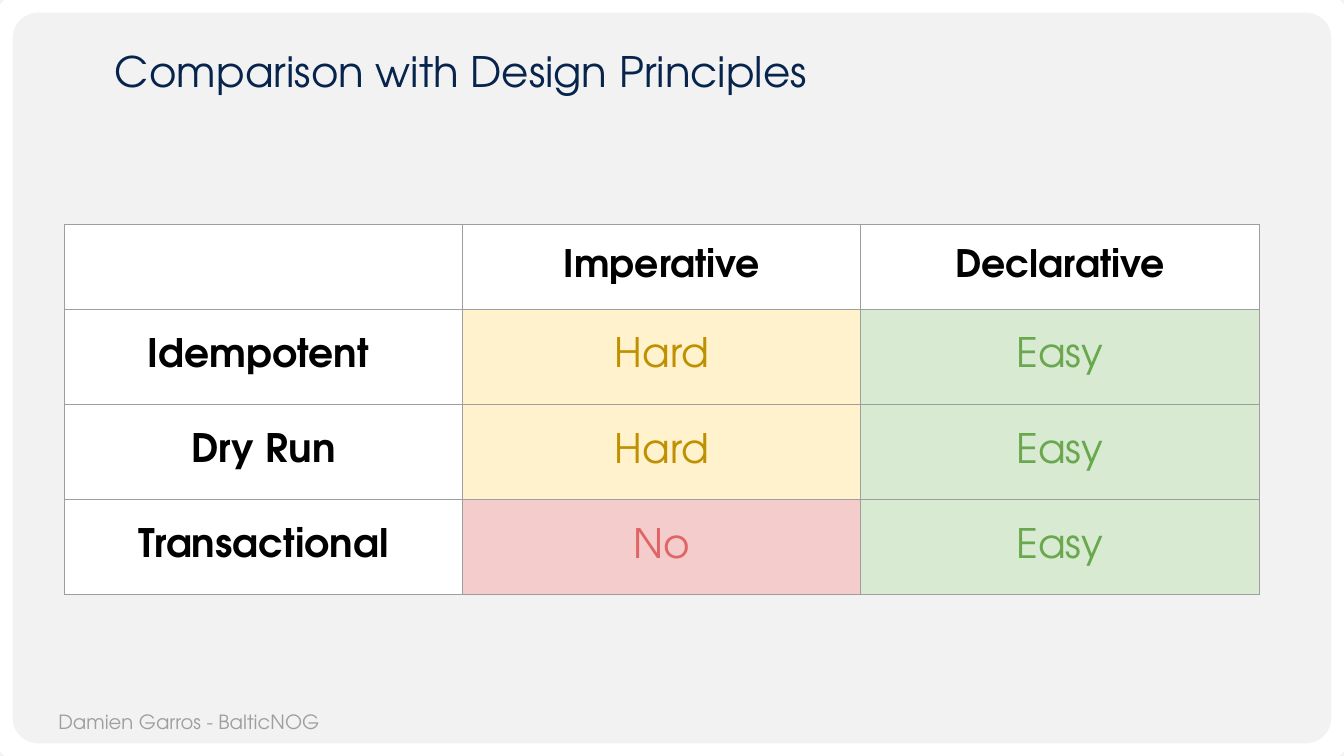
from dataclasses import dataclass

from lxml import etree
from pptx import Presentation
from pptx.dml.color import RGBColor
from pptx.enum.shapes import MSO_SHAPE
from pptx.enum.text import MSO_ANCHOR, MSO_AUTO_SIZE, PP_ALIGN
from pptx.oxml.ns import qn
from pptx.util import Pt

ROUNDED = MSO_SHAPE.ROUNDED_RECTANGLE
TOP, MIDDLE = MSO_ANCHOR.TOP, MSO_ANCHOR.MIDDLE
LEFT, CENTER = PP_ALIGN.LEFT, PP_ALIGN.CENTER
NO_AUTOFIT = MSO_AUTO_SIZE.NONE
TITLE_ONLY = 5
BORDER_TAGS = ("a:lnL", "a:lnR", "a:lnT", "a:lnB")


@dataclass(frozen=True)
class Theme:
    """Colours, font and type sizes of the slide."""
    font: str = "TeX Gyre Adventor"
    background: str = "F2F2F2"
    white: str = "FFFFFF"
    black: str = "000000"
    navy: str = "07244D"
    grey: str = "9E9E9E"
    title_size: int = 30
    footer_size: int = 14
    header_size: int = 27
    label_size: int = 28
    rating_size: int = 29
    inset: float = 7.2


THEME = Theme()
RATINGS = {"Hard": ("BF9000", "FFF2CC"),
           "Easy": ("6AA84F", "D9EAD3"),
           "No": ("E06666", "F4CCCC")}
HEADERS = ("", "Imperative", "Declarative")
PRINCIPLES = (("Idempotent ", "Hard", "Easy"),
              ("Dry Run", "Hard", "Easy"),
              ("Transactional", "No", "Easy"))


def set_attributes(target, values):
    """Set every attribute in values on the target."""
    for name, value in values.items():
        setattr(target, name, value)


def set_insets(target):
    """Give a cell or text frame the theme's margins."""
    sides = ("left", "right", "top", "bottom")
    set_attributes(target, {f"margin_{side}": Pt(THEME.inset) for side in sides})


def write_text(text_frame, text, size, color, bold=False, alignment=LEFT):
    """Write one formatted paragraph and return it."""
    paragraph = text_frame.paragraphs[0]
    paragraph.alignment = alignment
    run = paragraph.add_run()
    run.text = text
    set_attributes(run.font, {"name": THEME.font, "size": Pt(size), "bold": bold})
    run.font.color.rgb = RGBColor.from_string(color)
    return paragraph


def add_frame(slide, left, top, width, height):
    """Draw the rounded white border around the slide."""
    frame = slide.shapes.add_shape(ROUNDED, Pt(left), Pt(top), Pt(width), Pt(height))
    frame.adjustments[0] = 0.05
    frame.shadow.inherit = False
    frame.fill.background()
    frame.line.width = Pt(18)
    frame.line.color.rgb = RGBColor.from_string(THEME.white)


def add_footer(slide, left, top, width, height):
    """Place the speaker line."""
    footer = slide.shapes.add_textbox(Pt(left), Pt(top), Pt(width), Pt(height))
    footer.text_frame.word_wrap = True
    set_insets(footer.text_frame)
    write_text(footer.text_frame, "Damien Garros - BalticNOG", THEME.footer_size, THEME.grey)


def add_title(slide, left, top, width, height):
    """Move and fill the title placeholder."""
    title = slide.shapes.title
    set_attributes(title, {"left": Pt(left), "top": Pt(top),
                           "width": Pt(width), "height": Pt(height)})
    set_attributes(title.text_frame, {"vertical_anchor": TOP, "word_wrap": True,
                                      "auto_size": NO_AUTOFIT})
    set_insets(title.text_frame)
    paragraph = write_text(title.text_frame, "Comparison with Design Principles",
                           THEME.title_size, THEME.navy)
    paragraph.line_spacing = 0.8


def set_borders(cell):
    """Draw a thin grey line on all four sides of a cell."""
    properties = cell._tc.get_or_add_tcPr()
    for position, tag in enumerate(BORDER_TAGS):
        line = etree.Element(qn(tag), w=str(Pt(0.75)))
        fill = etree.SubElement(line, qn("a:solidFill"))
        etree.SubElement(fill, qn("a:srgbClr"), val=THEME.grey)
        properties.insert(position, line)


def fill_cell(cell, text, size, color, fill, bold):
    """Format one table cell and write its text."""
    cell.vertical_anchor = MIDDLE
    set_insets(cell)
    cell.fill.solid()
    cell.fill.fore_color.rgb = RGBColor.from_string(fill)
    set_borders(cell)
    if text:
        write_text(cell.text_frame, text, size, color, bold, CENTER)


def add_comparison(slide, left, top, width, height):
    """Build the comparison table with a slightly lower header row."""
    rows = (HEADERS, *PRINCIPLES)
    table = slide.shapes.add_table(len(rows), len(HEADERS), Pt(left), Pt(top),
                                   Pt(width), Pt(height)).table
    set_attributes(table, {"first_row": False, "horz_banding": False})
    header_height = 60.5
    row_height = (height - header_height) / len(PRINCIPLES)
    for column in table.columns:
        column.width = Pt(width / len(HEADERS))
    for row_index, texts in enumerate(rows):
        table.rows[row_index].height = Pt(row_height if row_index else header_height)
        label_size = THEME.label_size if row_index else THEME.header_size
        for column_index, text in enumerate(texts):
            rated = text in RATINGS
            color, fill = RATINGS.get(text, (THEME.black, THEME.white))
            size = THEME.rating_size if rated else label_size
            fill_cell(table.cell(row_index, column_index), text, size, color, fill, not rated)


def main():
    """Build and save the presentation."""
    presentation = Presentation()
    set_attributes(presentation, {"slide_width": Pt(960), "slide_height": Pt(540)})
    slide = presentation.slides.add_slide(presentation.slide_layouts[TITLE_ONLY])
    slide.background.fill.solid()
    slide.background.fill.fore_color.rgb = RGBColor.from_string(THEME.background)
    add_frame(slide, 0, 0, 960, 540)
    add_footer(slide, 34.6, 499.7, 466, 31.7)
    add_title(slide, 74.9, 32.4, 847.4, 46.8)
    add_comparison(slide, 46.1, 160.4, 853.2, 264.2)
    presentation.save("out.pptx")


if __name__ == "__main__":
    main()
